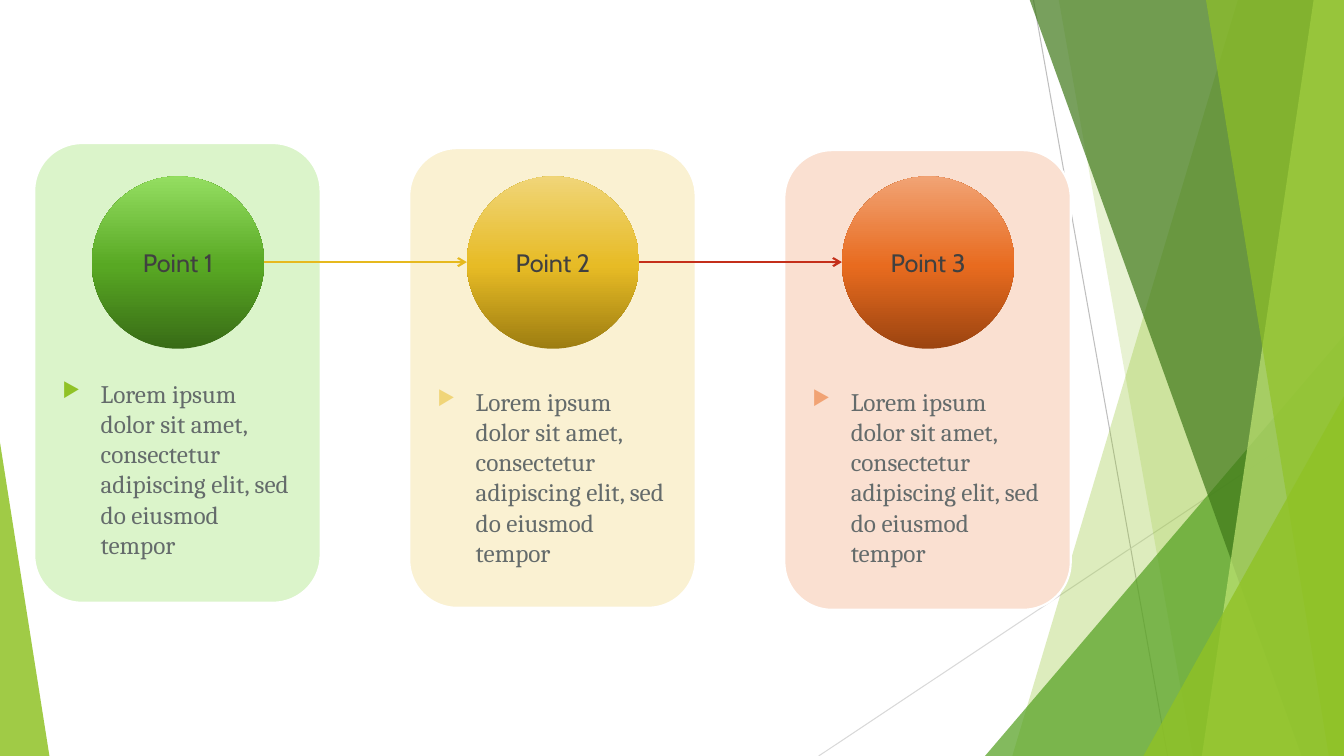
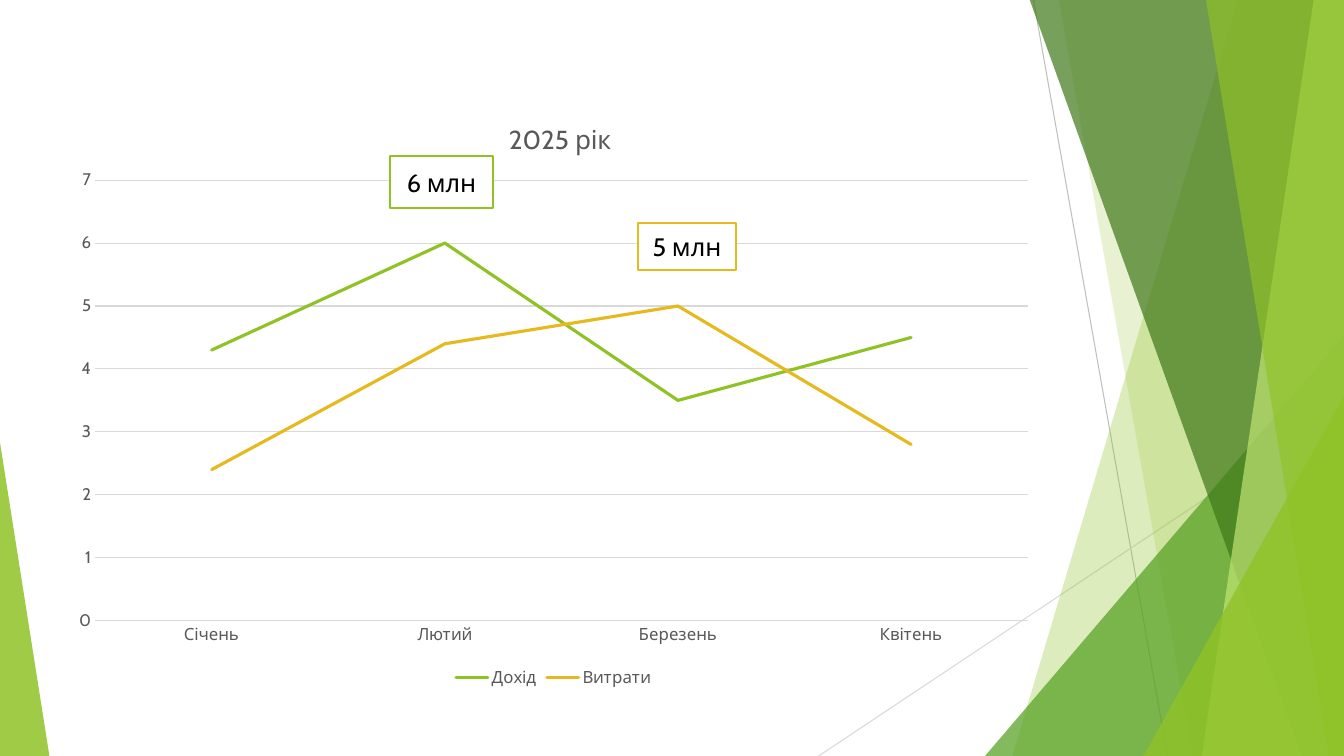
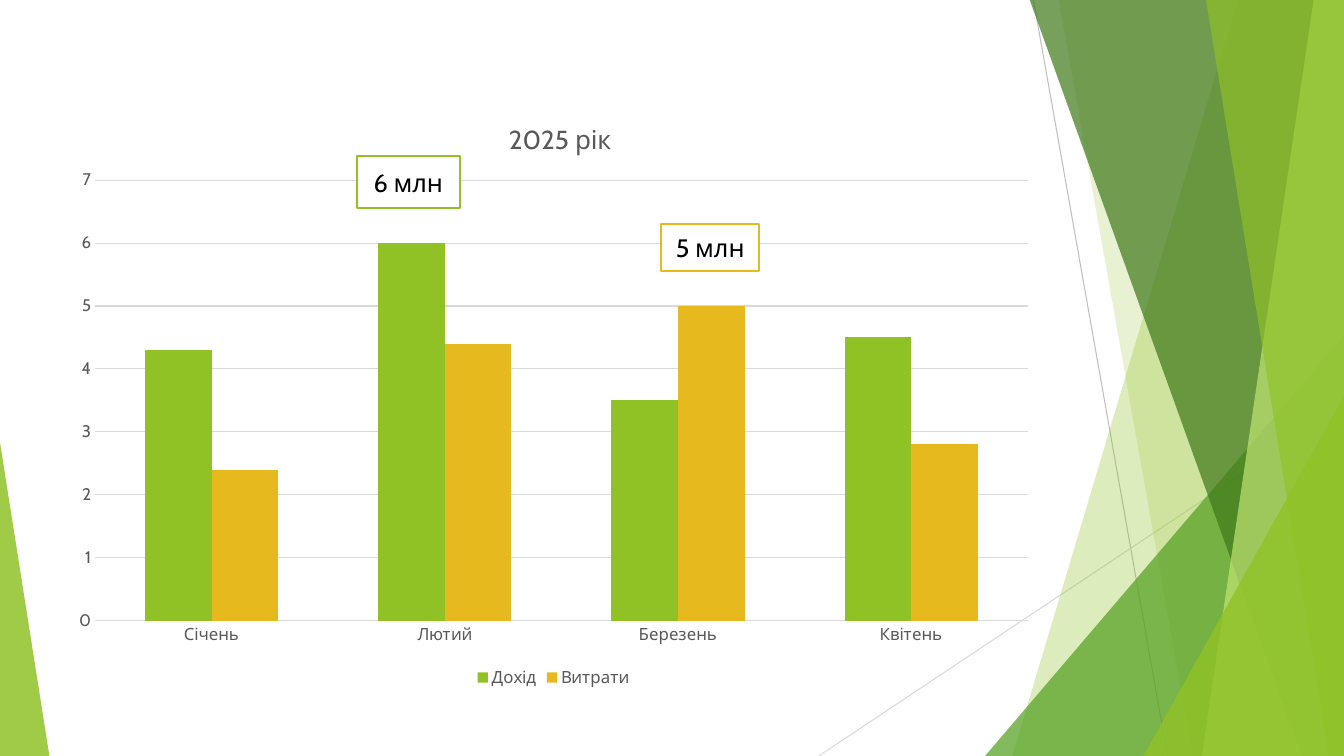
from copy import deepcopy
from typing import NamedTuple

from lxml.etree import SubElement
from pptx import Presentation
from pptx.chart.data import CategoryChartData as ChartData
from pptx.dml.color import RGBColor as Color
from pptx.enum.chart import XL_CHART_TYPE as Chart
from pptx.enum.chart import XL_LEGEND_POSITION as Legend
from pptx.enum.chart import XL_TICK_MARK as Tick
from pptx.enum.shapes import MSO_CONNECTOR as Wire
from pptx.enum.shapes import MSO_SHAPE as Form
from pptx.enum.text import MSO_ANCHOR as Anchor
from pptx.enum.text import PP_ALIGN as Align
from pptx.oxml import parse_xml
from pptx.oxml.ns import nsdecls, qn
from pptx.util import Emu, Pt

PX = 9144
WIDE, HIGH = 1333, 750
SANS, SERIF = "Cabin", "Cambria"

WHITE = Color(0xFF, 0xFF, 0xFF)
BLACK = Color(0x00, 0x00, 0x00)
LIME = Color(0x90, 0xC2, 0x26)
LEAF = Color(0x54, 0xA0, 0x21)
MOSS = Color(0x3F, 0x78, 0x19)
PALE = Color(0xC0, 0xE4, 0x74)
GOLD = Color(0xE6, 0xB9, 0x1E)
RED = Color(0xC4, 0x2F, 0x1A)
SAND = Color(0xF0, 0xD5, 0x78)
PEACH = Color(0xF1, 0xA3, 0x74)
DARK = Color(0x40, 0x40, 0x40)
GREY = Color(0x59, 0x59, 0x59)
SLATE = Color(0x64, 0x6B, 0x6B)
SILVER = Color(0xBF, 0xBF, 0xBF)
MIST = Color(0xD9, 0xD9, 0xD9)

LOREM = "Lorem ipsum dolor sit amet, consectetur adipiscing elit, sed do eiusmod tempor"
MONTHS = ["Січень", "Лютий", "Березень", "Квітень"]
SERIES = [("Дохід", (4.3, 6, 3.5, 4.5), LIME), ("Витрати", (2.4, 4.4, 5, 2.8), GOLD)]


class Box(NamedTuple):
    left: int
    top: int
    width: int
    height: int


class Facet(NamedTuple):
    points: list[tuple[int, int]]
    fill: Color
    alpha: int


class Wedge(NamedTuple):
    box: Box
    tip: int
    fill: Color
    alpha: int


class Card(NamedTuple):
    title: str
    top: int
    text_top: int
    fill: Color
    shades: tuple[Color, Color, Color]
    bullet: Color
    arrow: Color | None


class Label(NamedTuple):
    text: str
    box: Box
    line: Color


def band(top_left: int, foot_left: int, fill: Color, alpha: int) -> Facet:
    return Facet([(top_left, -1), (WIDE, -1), (WIDE, HIGH), (foot_left, HIGH)], fill, alpha)


DECOR = [
    band(1228, 1004, LIME, 30),
    band(1050, 1183, LIME, 20),
    Wedge(Box(977, 333, 356, 417), 1, LEAF, 72),
    band(1021, 1291, MOSS, 70),
    band(1303, 1192, PALE, 70),
    band(1196, 1318, LIME, 65),
    Wedge(Box(1134, 393, 199, 357), 1, LIME, 80),
    Wedge(Box(0, 439, 49, 311), 0, LIME, 85),
]

CARDS = [
    Card("Point 1", 142, 370, Color(0xDB, 0xF4, 0xCA),
         (Color(0x38, 0x6B, 0x16), Color(0x58, 0xA8, 0x23), Color(0x94, 0xDE, 0x61)), LIME, GOLD),
    Card("Point 2", 147, 378, Color(0xFA, 0xF1, 0xD2),
         (Color(0x9D, 0x7D, 0x11), Color(0xE7, 0xBB, 0x25), SAND), SAND, RED),
    Card("Point 3", 149, 378, Color(0xFA, 0xE0, 0xD1),
         (Color(0x9B, 0x44, 0x10), Color(0xE8, 0x6B, 0x1F), PEACH), PEACH, None),
]


def emu(*sizes: int) -> list[Emu]:
    return [Emu(size * PX) for size in sizes]


def style(font, size: float, color: Color, face: str = SANS) -> None:
    font.size, font.name, font.bold = Pt(size), face, False
    font.color.rgb = color


def pen(line, color: Color, width: float) -> None:
    line.color.rgb = color
    line.width = Pt(width)


def write(shape, text: str, *, size: float = 18, color: Color = BLACK, face: str = SANS,
          align: Align = Align.CENTER, anchor: Anchor = Anchor.MIDDLE,
          bullet: Color | None = None) -> None:
    frame = shape.text_frame
    frame.word_wrap = True
    frame.vertical_anchor = anchor
    para = frame.paragraphs[0]
    para.alignment = align
    run = para.add_run()
    run.text = text
    style(run.font, size, color, face)
    if bullet is not None:
        para.space_before = Pt(10)
        props = para._p.get_or_add_pPr()
        props.set("marL", str(38 * PX))
        props.set("indent", str(-38 * PX))
        SubElement(SubElement(props, qn("a:buClr")), qn("a:srgbClr"), val=str(bullet))
        SubElement(props, qn("a:buSzPct"), val="80000")
        SubElement(props, qn("a:buChar"), char="▶")


def block(slide, form: Form, box: Box, fill: Color | None = None,
          line: Color | None = None):
    shape = slide.shapes.add_shape(form, *emu(*box))
    shape.shadow.inherit = False
    if fill is not None:
        shape.fill.solid()
        shape.fill.fore_color.rgb = fill
    if line is None:
        shape.line.fill.background()
    else:
        pen(shape.line, line, 1.5)
    return shape


def glaze(shape, color: Color, alpha: int) -> None:
    shape.shadow.inherit = False
    shape.line.fill.background()
    shape.fill.solid()
    shape.fill.fore_color.rgb = color
    tint = shape.element.spPr.find(qn("a:solidFill")).find(qn("a:srgbClr"))
    SubElement(tint, qn("a:alpha"), val=str(alpha * 1000))


def shade(shape, colors: tuple[Color, Color, Color]) -> None:
    fill = shape.fill
    fill.gradient()
    fill.gradient_angle = 90
    stops = shape.element.spPr.find(".//" + qn("a:gsLst"))
    stops.append(deepcopy(stops[0]))
    for stop, color, spot in zip(fill.gradient_stops, colors, (0, 0.48, 1)):
        stop.color.rgb = color
        stop.position = spot


def wire(slide, start: tuple[int, int], end: tuple[int, int], color: Color,
         width: float, arrow: bool = False):
    line = slide.shapes.add_connector(Wire.STRAIGHT, *emu(*start, *end))
    pen(line.line, color, width)
    props = line.element.spPr
    if arrow:
        SubElement(props.find(qn("a:ln")), qn("a:tailEnd"), type="arrow")
    SubElement(props, qn("a:effectLst"))
    return line


def draw_decor(slide, item: Facet | Wedge):
    if isinstance(item, Wedge):
        shape = block(slide, Form.ISOSCELES_TRIANGLE, item.box)
        shape.adjustments[0] = item.tip
    else:
        pen_path = slide.shapes.build_freeform(*item.points[0], scale=PX)
        pen_path.add_line_segments(item.points[1:], close=True)
        shape = pen_path.convert_to_shape()
    glaze(shape, item.fill, item.alpha)
    return shape


def dress(layout, slide) -> None:
    for holder in list(layout.placeholders):
        layout.shapes.element.remove(holder.element)
    shapes = [
        wire(slide, (1025, 0), (1158, HIGH), SILVER, 0.75),
        wire(slide, (WIDE, 403), (812, HIGH), MIST, 0.75),
        *(draw_decor(slide, item) for item in DECOR),
    ]
    for shape in shapes:
        layout.shapes.element.append(shape.element)


def draw_cards(slide) -> None:
    for i, card in enumerate(CARDS):
        left = 34 + 372 * i
        block(slide, Form.ROUNDED_RECTANGLE, Box(left, card.top, 284, 456), card.fill, WHITE)
        disc = block(slide, Form.OVAL, Box(left + 57, 175, 171, 171))
        shade(disc, card.shades)
        write(disc, card.title, color=DARK)
        note = slide.shapes.add_textbox(*emu(left + 18, card.text_top, 249, 202))
        write(note, LOREM, color=SLATE, face=SERIF, align=Align.LEFT,
              anchor=Anchor.TOP, bullet=card.bullet)
    for i, card in enumerate(CARDS):
        if card.arrow is not None:
            left = 262 + 372 * i
            wire(slide, (left, 260), (left + 201, 260), card.arrow, 1.5, arrow=True)


def place(host, index: int, **spots: float) -> None:
    old = host.find(qn("c:layout"))
    if old is not None:
        host.remove(old)
    layout = parse_xml(f"<c:layout {nsdecls('c')}/>")
    manual = SubElement(layout, qn("c:manualLayout"))
    if "w" in spots:
        SubElement(manual, qn("c:layoutTarget"), val="inner")
    for mode in ("xMode", "yMode"):
        SubElement(manual, qn(f"c:{mode}"), val="edge")
    for name, spot in spots.items():
        SubElement(manual, qn(f"c:{name}"), val=str(spot))
    host.insert(index, layout)


def draw_chart(slide, kind: Chart, labels: list[Label]) -> None:
    data = ChartData()
    data.categories = MONTHS
    for name, values, _ in SERIES:
        data.add_series(name, values)
    chart = slide.shapes.add_chart(kind, *emu(59, 92, 980, 594), data).chart
    style(chart.font, 10, BLACK)

    chart.has_title = True
    run = chart.chart_title.text_frame.paragraphs[0].add_run()
    run.text = "2025 рік"
    style(run.font, 18.6, GREY)
    place(chart.element.find(".//" + qn("c:title")), 1, x=0.45, y=0.04)
    place(chart.element.find(".//" + qn("c:plotArea")), 0, x=0.036, y=0.146, w=0.944, h=0.736)

    chart.has_legend = True
    chart.legend.position = Legend.BOTTOM
    chart.legend.include_in_layout = False
    style(chart.legend.font, 12, GREY)

    for axis in (chart.category_axis, chart.value_axis):
        axis.major_tick_mark = axis.minor_tick_mark = Tick.NONE
        style(axis.tick_labels.font, 12, GREY)
    pen(chart.category_axis.format.line, MIST, 0.75)
    scale = chart.value_axis
    scale.minimum_scale, scale.maximum_scale, scale.major_unit = 0, 7, 1
    scale.format.line.fill.background()
    pen(scale.major_gridlines.format.line, MIST, 0.75)

    plot = chart.plots[0]
    plot.vary_by_categories = False
    if kind == Chart.COLUMN_CLUSTERED:
        plot.gap_width, plot.overlap = 150, 0
    for series, (_, _, color) in zip(plot.series, SERIES):
        if kind == Chart.LINE:
            series.smooth = False
            pen(series.format.line, color, 2.25)
            series.format.line._get_or_add_ln().set("cap", "rnd")
        else:
            series.format.fill.solid()
            series.format.fill.fore_color.rgb = color

    for label in labels:
        write(block(slide, Form.RECTANGLE, label.box, WHITE, label.line), label.text)


def main() -> None:
    deck = Presentation()
    deck.slide_width, deck.slide_height = emu(WIDE, HIGH)
    layout = deck.slide_layouts[6]
    cards, trend, bars = [deck.slides.add_slide(layout) for _ in range(3)]
    dress(layout, cards)
    draw_cards(cards)
    draw_chart(trend, Chart.LINE, [
        Label("6 млн", Box(387, 155, 102, 51), LIME),
        Label("5 млн", Box(633, 221, 97, 47), GOLD),
    ])
    draw_chart(bars, Chart.COLUMN_CLUSTERED, [
        Label("6 млн", Box(354, 155, 102, 51), LIME),
        Label("5 млн", Box(656, 222, 97, 47), GOLD),
    ])
    deck.save("out.pptx")


if __name__ == "__main__":
    main()
